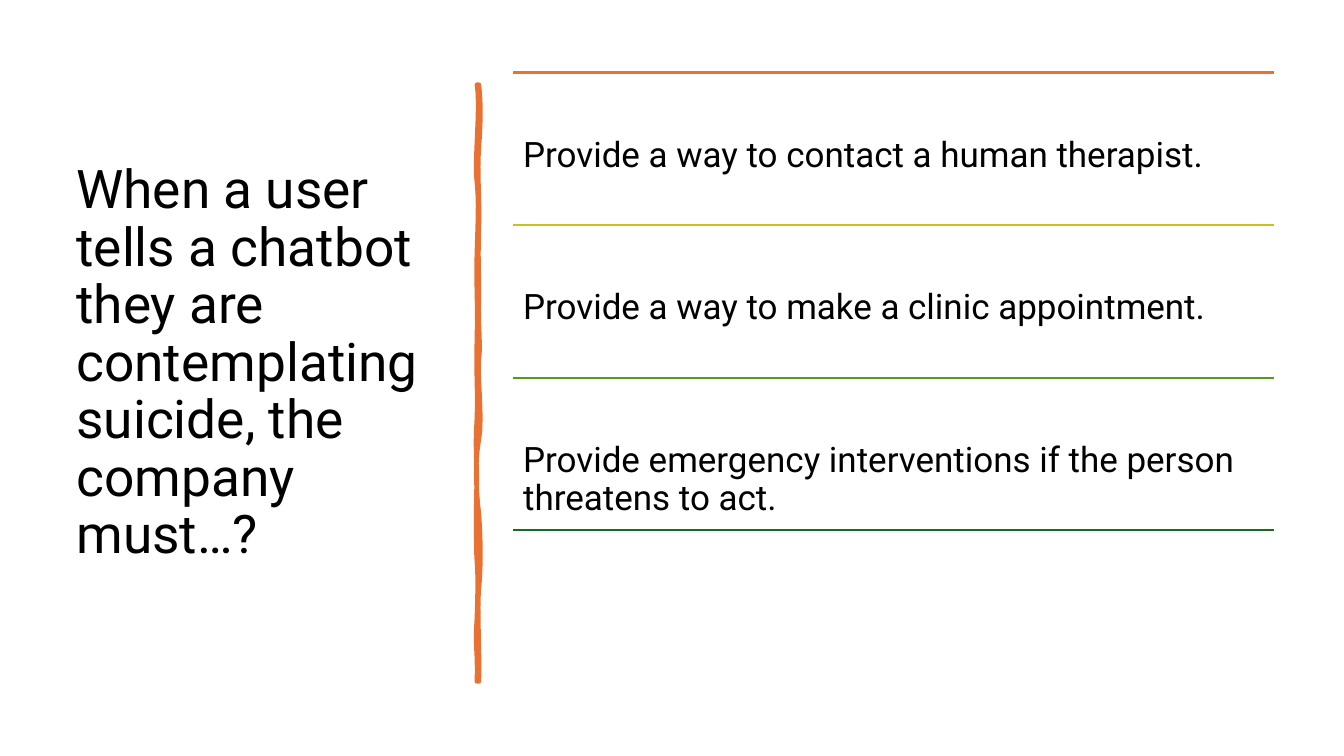
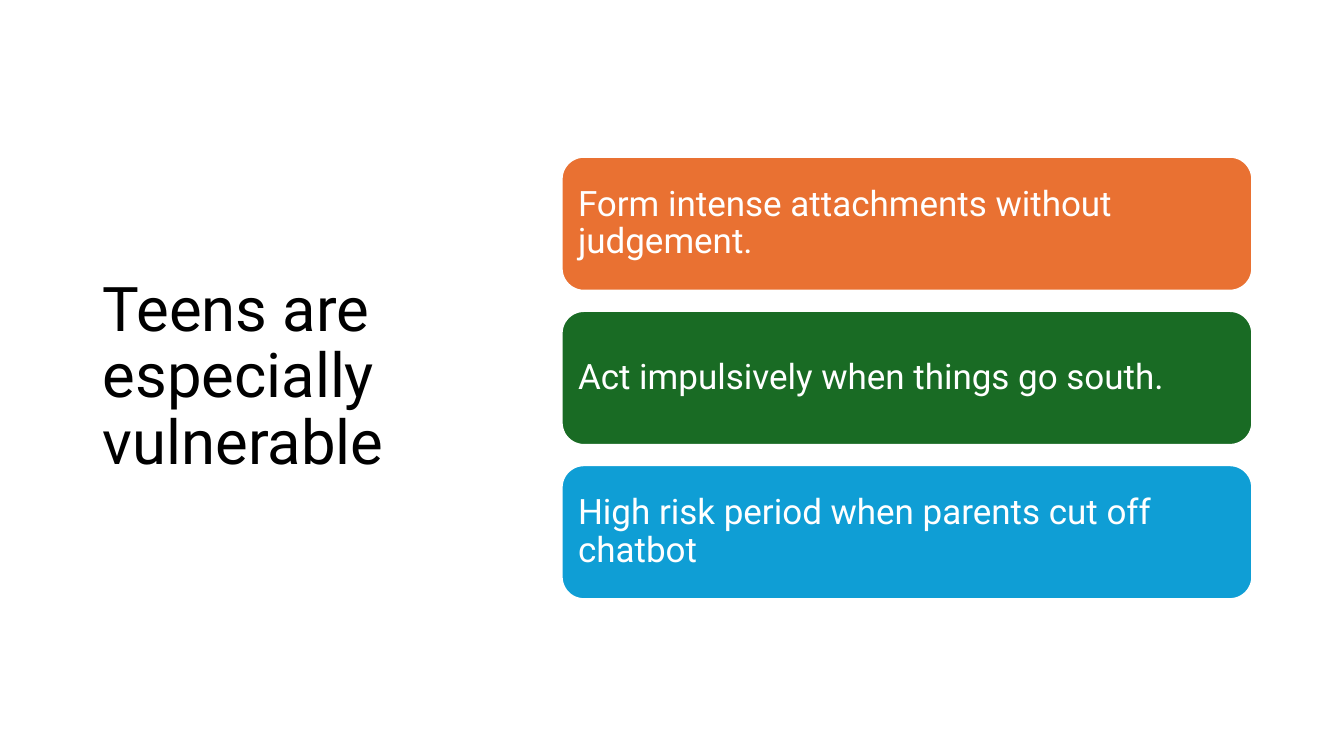
import lxml.etree
import pptx
import pptx.dml.color
import pptx.enum.shapes
import pptx.enum.text
import pptx.oxml.ns
import pptx.util

Inches = pptx.util.Inches
Pt = pptx.util.Pt
SHAPES = pptx.enum.shapes.MSO_SHAPE
CONNECTORS = pptx.enum.shapes.MSO_CONNECTOR
ANCHORS = pptx.enum.text.MSO_ANCHOR

ORANGE, OLIVE, LIME, GREEN, BLUE = "E97132", "CBC11E", "56991D", "196B24", "0F9ED5"
BLACK, WHITE = "000000", "FFFFFF"

BRUSH_RIGHT_START = (4.75, 0.84)
BRUSH_RIGHT = [
    (4.77, 1.02, 4.77, 1.19, 4.75, 1.46), (4.73, 1.73, 4.76, 1.95, 4.75, 2.26),
    (4.74, 2.57, 4.75, 2.62, 4.75, 2.94), (4.74, 3.25, 4.77, 3.42, 4.75, 3.56),
    (4.73, 3.7, 4.79, 4.14, 4.75, 4.36), (4.71, 4.57, 4.72, 4.84, 4.75, 5.1),
    (4.77, 5.36, 4.77, 5.64, 4.75, 5.84), (4.73, 6.03, 4.76, 6.5, 4.75, 6.76),
]
BRUSH_LEFT_START = (4.73, 6.76)
BRUSH_LEFT = [
    (4.74, 6.46, 4.71, 6.44, 4.73, 6.13), (4.74, 5.83, 4.74, 5.7, 4.73, 5.57),
    (4.72, 5.44, 4.72, 4.95, 4.73, 4.77), (4.73, 4.59, 4.71, 4.45, 4.73, 4.15),
    (4.74, 3.86, 4.72, 3.73, 4.73, 3.35), (4.74, 2.98, 4.72, 2.81, 4.73, 2.5),
    (4.74, 2.18, 4.75, 2, 4.73, 1.81), (4.7, 1.63, 4.77, 1.04, 4.73, 0.84),
]


def color(value):
    return pptx.dml.color.RGBColor.from_string(value)


def trace_curves(start, curves, steps=8):
    points = [start]
    for x1, y1, x2, y2, x3, y3 in curves:
        x0, y0 = points[-1]
        for step in range(1, steps + 1):
            t = step / steps
            weights = ((1 - t) ** 3, 3 * t * (1 - t) ** 2, 3 * t * t * (1 - t), t ** 3)
            points.append(tuple(
                sum(weight * value for weight, value in zip(weights, values))
                for values in ((x0, x1, x2, x3), (y0, y1, y2, y3))
            ))
    return points


class SlideBuilder:
    font_name = "Roboto"
    line_spacing = 0.9
    body_size = 25
    body_margins = {f"margin_{side}": Inches(0.1) for side in ("left", "top", "right", "bottom")}

    def __init__(self, deck):
        self.deck = deck
        self.slide = None

    def new_slide(self):
        self.slide = self.deck.slides.add_slide(self.deck.slide_layouts[6])

    def set_text(self, shape, text, size, ink, **frame_format):
        frame = shape.text_frame
        for name, value in {"word_wrap": True, **frame_format}.items():
            setattr(frame, name, value)
        para = frame.paragraphs[0]
        para.alignment = pptx.enum.text.PP_ALIGN.LEFT
        para.line_spacing = self.line_spacing
        span = para.add_run()
        span.text = text
        for name, value in {"name": self.font_name, "size": Pt(size)}.items():
            setattr(span.font, name, value)
        span.font.color.rgb = color(ink)

    def text(self, text, at, size, **frame_format):
        box = self.slide.shapes.add_textbox(*map(Inches, at))
        self.set_text(box, text, size, BLACK, **frame_format)

    def title(self, text, at, size):
        self.text(text, at, size, vertical_anchor=ANCHORS.MIDDLE)

    def body(self, text, at):
        self.text(text, at, self.body_size, vertical_anchor=ANCHORS.TOP, **self.body_margins)

    def paint(self, shape, fill, line, width):
        shape.shadow.inherit = False
        shape.fill.solid()
        shape.fill.fore_color.rgb = color(fill)
        shape.line.color.rgb = color(line)
        shape.line.width = Pt(width)

    def card(self, text, at, fill):
        card = self.slide.shapes.add_shape(SHAPES.ROUNDED_RECTANGLE, *map(Inches, at))
        self.paint(card, fill, WHITE, 1.5)
        self.set_text(card, text, self.body_size, WHITE,
                      vertical_anchor=ANCHORS.MIDDLE, **self.body_margins)

    def rule(self, left, top, width, ink):
        ends = map(Inches, (left, top, left + width, top))
        rule = self.slide.shapes.add_connector(CONNECTORS.STRAIGHT, *ends)
        rule.line.color.rgb = color(ink)
        rule.line.width = Pt(1.5)
        lxml.etree.SubElement(rule._element.spPr, pptx.oxml.ns.qn("a:effectLst"))

    def outline(self, points, fill, width):
        start, *rest = [(Inches(x), Inches(y)) for x, y in points]
        builder = self.slide.shapes.build_freeform(*start)
        builder.add_line_segments(rest, close=True)
        self.paint(builder.convert_to_shape(), fill, fill, width)


def add_duties_slide(builder):
    builder.new_slide()
    builder.title(
        "When a user tells a chatbot they are contemplating suicide, the company must…?",
        (0.66, 0.84, 3.74, 5.54), 38,
    )
    brush = trace_curves(BRUSH_RIGHT_START, BRUSH_RIGHT) + trace_curves(BRUSH_LEFT_START, BRUSH_LEFT)
    builder.outline(brush, ORANGE, 3.25)

    duties = [
        "Provide a way to contact a human therapist.",
        "Provide a way to make a clinic appointment.",
        "Provide emergency interventions if the person threatens to act.",
    ]
    left, top, bottom, width, text_drop = 5.09, 0.72, 5.26, 7.55, 0.54
    pitch = (bottom - top) / len(duties)
    for index, ink in enumerate((ORANGE, OLIVE, LIME, GREEN)):
        builder.rule(left, top + index * pitch, width, ink)
    for index, duty in enumerate(duties):
        builder.body(duty, (left, top + index * pitch + text_drop, width, pitch - text_drop))


def add_teens_slide(builder):
    builder.new_slide()
    builder.title("Teens are especially vulnerable", (0.92, 0, 3.69, 7.5), 44)
    risks = [
        ("Form intense attachments without judgement.", ORANGE),
        ("Act impulsively when things go south.", GREEN),
        ("High risk period when parents cut off chatbot", BLUE),
    ]
    left, width, height, gap, middle = 5.57, 6.85, 1.33, 0.2, 3.75
    pitch = height + gap
    top = middle - (len(risks) * pitch - gap) / 2
    for index, (risk, fill) in enumerate(risks):
        builder.card(risk, (left, top + index * pitch, width, height), fill)


def main():
    deck = pptx.Presentation()
    deck.slide_width, deck.slide_height = Inches(13.33), Inches(7.5)
    builder = SlideBuilder(deck)
    add_duties_slide(builder)
    add_teens_slide(builder)
    deck.save("out.pptx")


if __name__ == "__main__":
    main()
